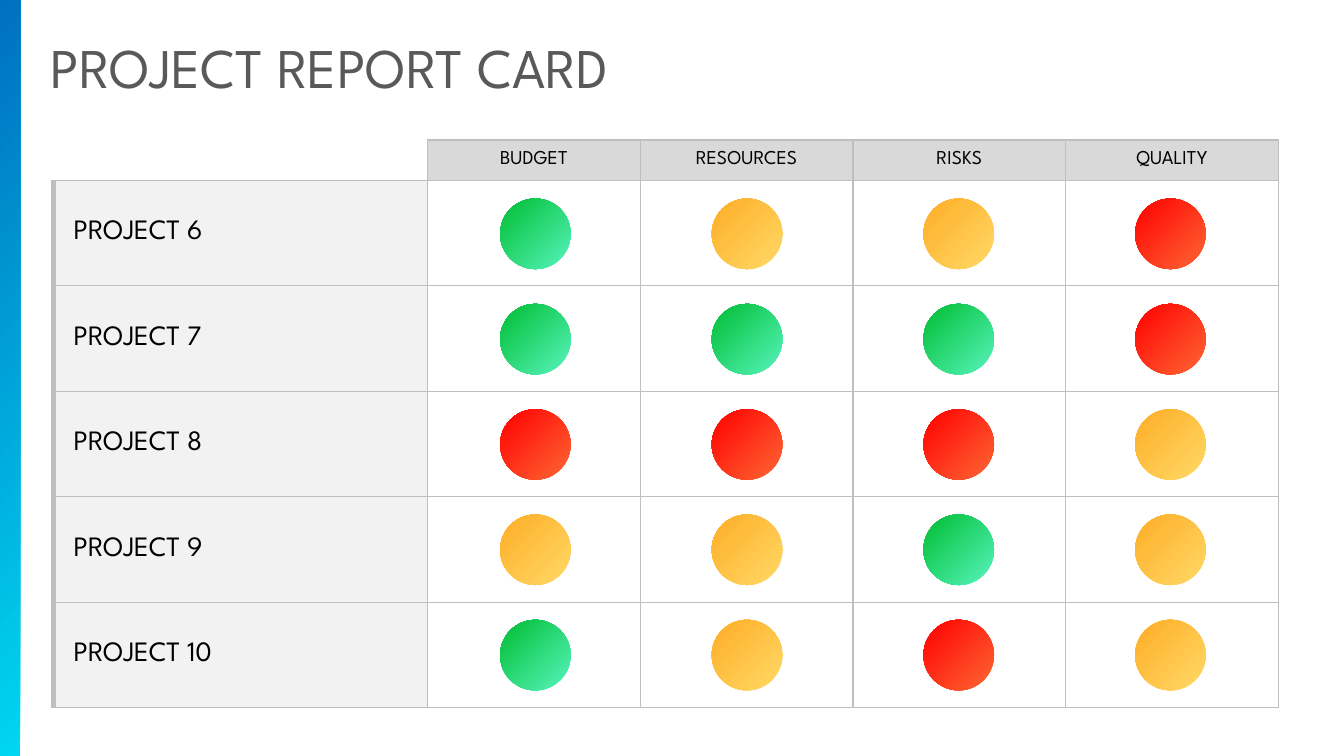
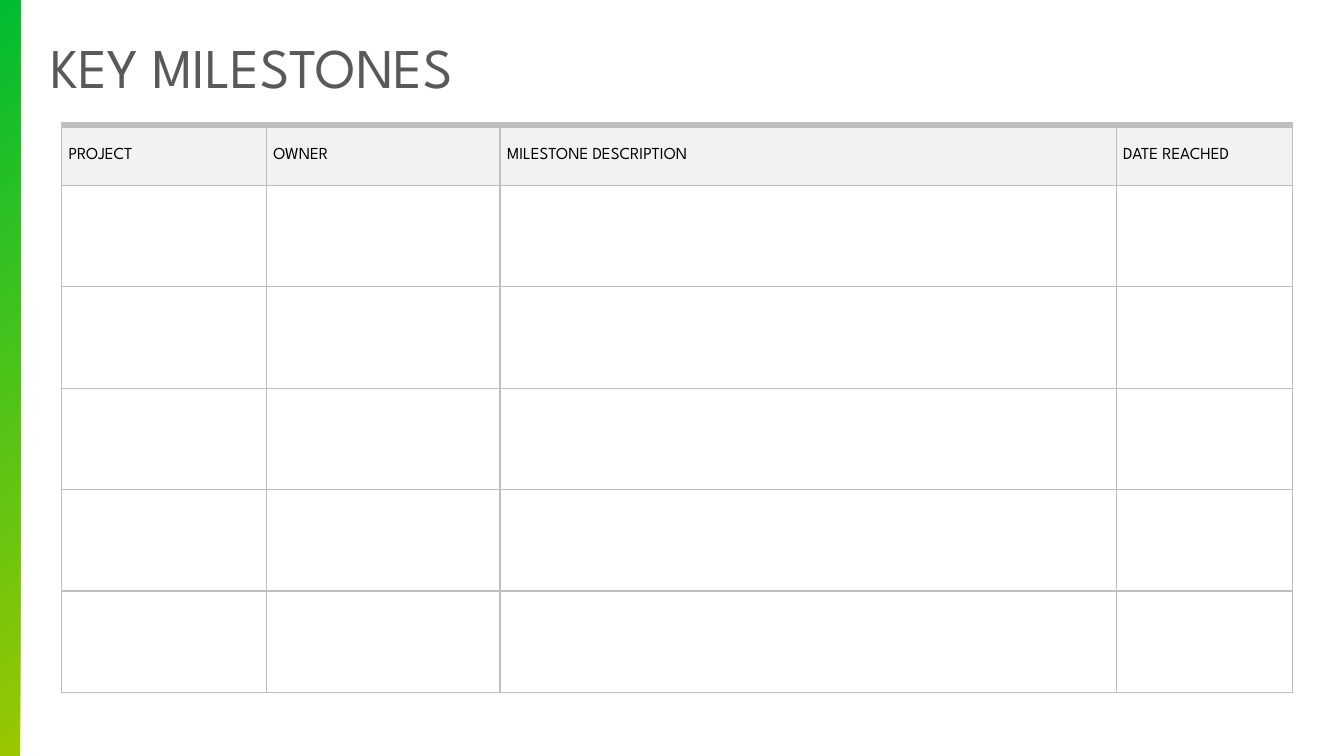
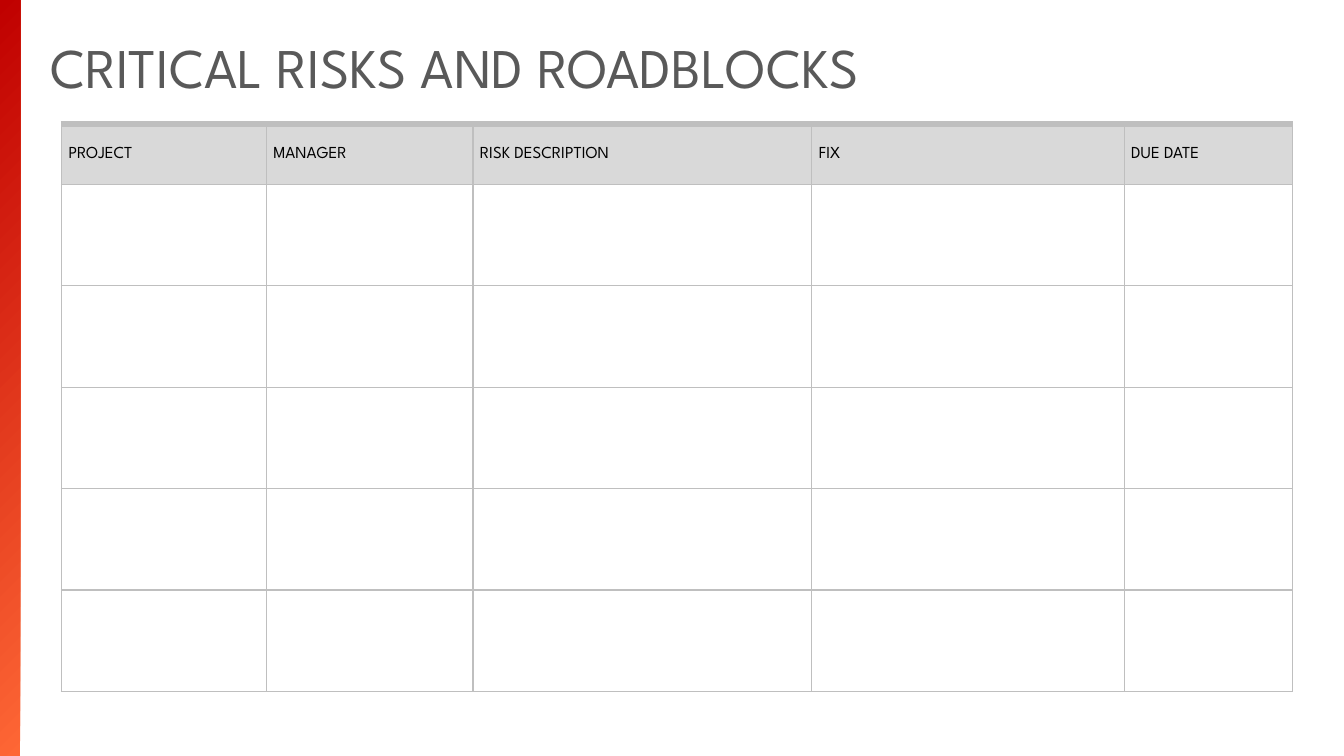
from lxml import etree
from pptx import Presentation
from pptx.dml.color import RGBColor
from pptx.enum.shapes import MSO_SHAPE
from pptx.enum.text import MSO_ANCHOR, MSO_AUTO_SIZE, PP_ALIGN
from pptx.oxml.ns import qn
from pptx.util import Inches, Pt

RECTANGLE, OVAL = MSO_SHAPE.RECTANGLE, MSO_SHAPE.OVAL
TOP, MIDDLE = MSO_ANCHOR.TOP, MSO_ANCHOR.MIDDLE
LEFT, CENTER = PP_ALIGN.LEFT, PP_ALIGN.CENTER
FIT_SHAPE = MSO_AUTO_SIZE.SHAPE_TO_FIT_TEXT
TITLE_ONLY = 5

COLORS = {
    "title": "595959", "text": "000000", "border": "BFBFBF",
    "header": "D9D9D9", "label": "F2F2F2", "white": "FFFFFF",
}
GRADIENTS = {
    "blue": ("00D6F1", "0070C0"),
    "lime": ("9AC700", "00BD32"),
    "crimson": ("FE6735", "C00000"),
    "G": ("58F5BE", "00BD32"),
    "Y": ("FFD966", "FEAD27"),
    "R": ("FE6735", "FF0000"),
}
FONT = "League Spartan"
TABLE_HEIGHT = 75.07
BODY_ROWS = 5
THIN, THICK = 1, 4.5

REPORT_HEADERS = ["BUDGET", "RESOURCES", "RISKS", "QUALITY"]
REPORT_ROWS = [
    ("PROJECT 6", "GYYR"),
    ("PROJECT 7", "GGGR"),
    ("PROJECT 8", "RRRY"),
    ("PROJECT 9", "YYGY"),
    ("PROJECT 10", "GYRY"),
]


class Deck:
    """Builds pages; every position and size is a percentage of the slide."""

    def __init__(self):
        self.deck = Presentation()
        self.deck.slide_width = Inches(13.33)
        self.deck.slide_height = Inches(7.5)
        self.page = None

    def across(self, percent):
        return round(self.deck.slide_width * percent / 100)

    def down(self, percent):
        return round(self.deck.slide_height * percent / 100)

    def new_page(self, title, title_width, band):
        self.page = self.deck.slides.add_slide(self.deck.slide_layouts[TITLE_ONLY])
        box = self.page.shapes.title
        box.left, box.top = self.across(3), self.down(3.6)
        box.width, box.height = self.across(title_width), self.down(10.27)
        frame = box.text_frame
        frame.text = title
        frame.word_wrap = False
        frame.auto_size = FIT_SHAPE
        frame.vertical_anchor = TOP
        self.style(frame.paragraphs[0], 40, "title", LEFT)
        self.gradient_shape(RECTANGLE, 0, 0, self.across(1.5), self.down(100), band)

    def style(self, para, size, color, align):
        para.alignment = align
        for span in para.runs:
            span.font.name = FONT
            span.font.size = Pt(size)
            span.font.color.rgb = RGBColor.from_string(COLORS[color])

    def gradient_shape(self, kind, left, top, width, height, gradient):
        shape = self.page.shapes.add_shape(kind, left, top, width, height)
        shape.shadow.inherit = False
        shape.line.fill.background()
        shape.fill.gradient()
        shape.fill.gradient_angle = 135
        for stop, color in zip(shape.fill.gradient_stops, GRADIENTS[gradient]):
            stop.color.rgb = RGBColor.from_string(color)

    def dot(self, left, top, gradient):
        size = self.across(5.25)
        self.gradient_shape(OVAL, self.across(left), self.down(top), size, size, gradient)

    def table(self, left, top, columns, header_height):
        heights = [header_height] + [(TABLE_HEIGHT - header_height) / BODY_ROWS] * BODY_ROWS
        table = self.page.shapes.add_table(
            len(heights), len(columns), self.across(left), self.down(top),
            self.across(sum(columns)), self.down(TABLE_HEIGHT)).table
        table.first_row = table.horz_banding = False
        for column, width in zip(table.columns, columns):
            column.width = self.across(width)
        for row, height in zip(table.rows, heights):
            row.height = self.down(height)
        for cell in table.iter_cells():
            self.cell(cell)
        return table

    def cell(self, cell, text="", size=12, fill="white", align=LEFT, inset=0.07,
             edges="LRTB", thick=""):
        cell.margin_left, cell.margin_right = Inches(inset), Inches(0.06)
        cell.margin_top = cell.margin_bottom = 0
        cell.vertical_anchor = MIDDLE
        cell.text = text
        self.style(cell.text_frame.paragraphs[0], size, "text", align)
        if fill:
            cell.fill.solid()
            cell.fill.fore_color.rgb = RGBColor.from_string(COLORS[fill])
        else:
            cell.fill.background()
        self.borders(cell, edges, thick)

    def borders(self, cell, edges, thick):
        properties = cell._tc.get_or_add_tcPr()
        for position, edge in enumerate("LRTB"):
            tag = qn(f"a:ln{edge}")
            for old in properties.findall(tag):
                properties.remove(old)
            line = etree.Element(tag, w=str(Pt(THICK if edge in thick else THIN)))
            properties.insert(position, line)
            if edge in edges:
                fill = etree.SubElement(line, qn("a:solidFill"))
                etree.SubElement(fill, qn("a:srgbClr"), val=COLORS["border"])
            else:
                etree.SubElement(line, qn("a:noFill"))

    def log_table(self, top, fill, columns):
        table = self.table(4.58, top, list(columns.values()), 8)
        for index, heading in enumerate(columns):
            self.cell(table.cell(0, index), heading, fill=fill, thick="T")

    def report_table(self):
        table = self.table(3.98, 18.53, [27.83] + [15.83] * len(REPORT_HEADERS), 5.33)
        self.cell(table.cell(0, 0), fill=None, edges="RB")
        for column, heading in enumerate(REPORT_HEADERS, 1):
            self.cell(table.cell(0, column), heading, 14, "header", CENTER, 0.06)
        for row, (project, ratings) in enumerate(REPORT_ROWS):
            self.cell(table.cell(row + 1, 0), project, 20, "label", inset=0.2, thick="L")
            for column, rating in enumerate(ratings):
                self.dot(37.21 + 15.75 * column, 26.27 + 13.93 * row, rating)


def main():
    deck = Deck()
    deck.new_page("PROJECT REPORT CARD", 49.59, "blue")
    deck.report_table()
    deck.new_page("KEY MILESTONES", 33.98, "lime")
    deck.log_table(16.53, "label", {
        "PROJECT": 15.23, "OWNER": 17.4, "MILESTONE DESCRIPTION": 45.84,
        "DATE REACHED": 13.13})
    deck.new_page("CRITICAL RISKS AND ROADBLOCKS", 71.19, "crimson")
    deck.log_table(16.4, "header", {
        "PROJECT": 15.23, "MANAGER": 15.38, "RISK DESCRIPTION": 25.21,
        "FIX": 23.25, "DUE DATE": 12.53})
    deck.deck.save("out.pptx")


if __name__ == "__main__":
    main()
